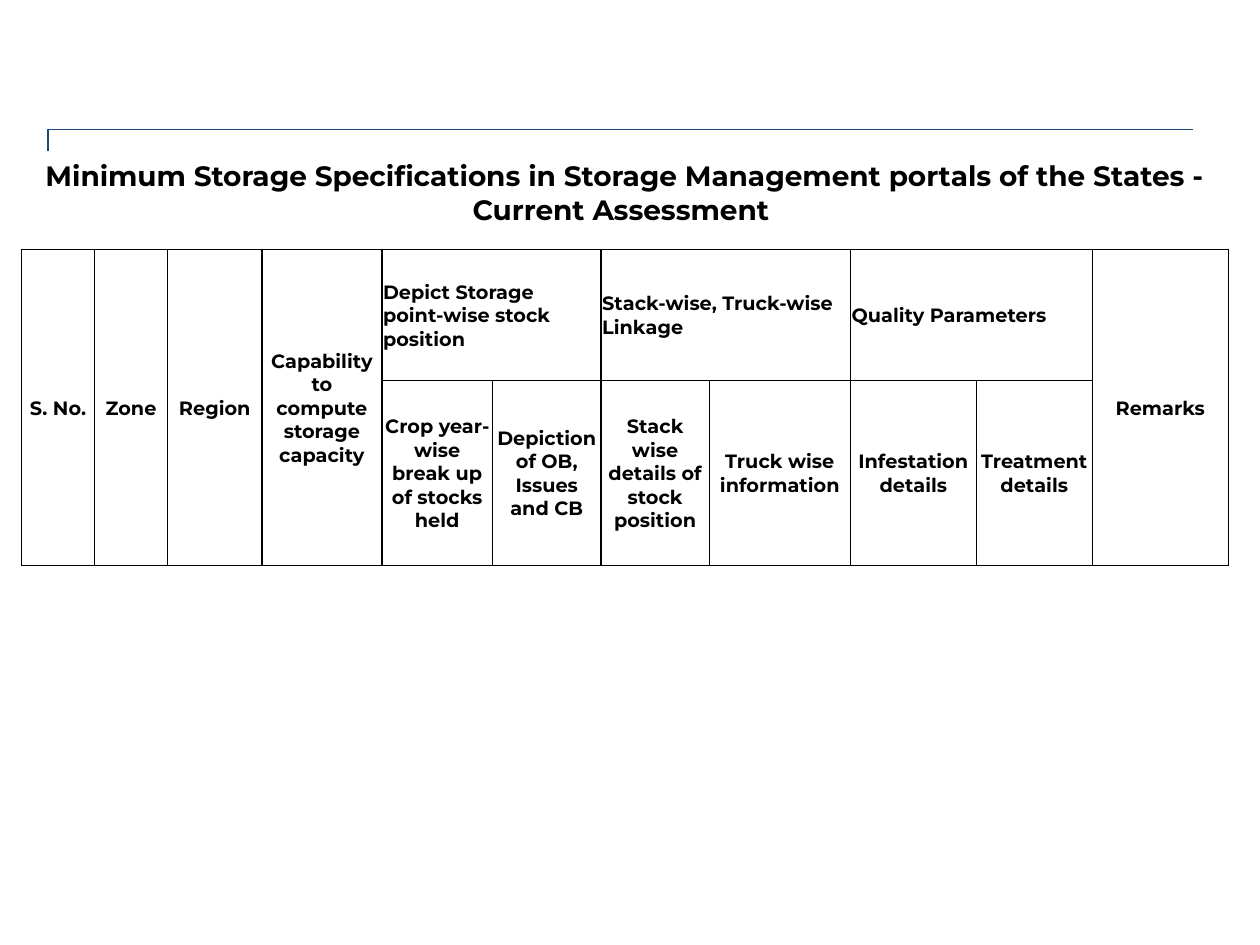
from lxml.etree import SubElement
from pptx import Presentation
from pptx.dml.color import RGBColor
from pptx.enum.shapes import MSO_CONNECTOR as Connector
from pptx.enum.text import MSO_ANCHOR as Anchor, PP_ALIGN as Align
from pptx.oxml import parse_xml
from pptx.oxml.ns import nsdecls, qn
from pptx.util import Pt

COLORS = {"ink": "000000", "rule": "1F497D"}
FONT = "Montserrat"
COLUMN_WIDTHS = [41.76, 41.76, 54, 68.4, 63.36, 61.92, 61.92, 80.64, 72, 66.24, 77.76]
ROW_HEIGHTS = [64.8, 74.88, 105.84]
TITLE = ("Minimum Storage Specifications in Storage Management portals "
         "of the States - Current Assessment ")
SINGLE_HEADINGS = {0: "S. No.", 1: "Zone", 2: "Region",
                   3: "Capability to compute storage capacity", 10: "Remarks"}
GROUPS = [
    ("Depict Storage point-wise stock position",
     ["Crop year-wise break up of stocks held", "Depiction of OB, Issues and CB"]),
    ("Stack-wise, Truck-wise Linkage",
     ["Stack wise details of stock position", "Truck wise information"]),
    ("Quality Parameters", ["Infestation details", "Treatment details"]),
]
FIRST_GROUP_COLUMN = 4


def write_text(cell, text, size=11, align=Align.CENTER):
    cell.vertical_anchor = Anchor.MIDDLE
    cell.margin_left = cell.margin_right = cell.margin_top = Pt(0.72)
    cell.margin_bottom = Pt(0)
    paragraph = cell.text_frame.paragraphs[0]
    paragraph.alignment = align
    run = paragraph.add_run()
    run.text = text
    run.font.name = FONT
    run.font.size = Pt(size)
    run.font.bold = True
    run.font.color.rgb = RGBColor.from_string(COLORS["ink"])


def set_borders(cell, visible_sides):
    properties = cell._tc.get_or_add_tcPr()
    for position, side in enumerate("LRTB"):
        if side in visible_sides:
            paint = f'<a:solidFill><a:srgbClr val="{COLORS["ink"]}"/></a:solidFill>'
        else:
            paint = "<a:noFill/>"
        border = parse_xml(f'<a:ln{side} {nsdecls("a")} w="{Pt(1)}">{paint}</a:ln{side}>')
        properties.insert(position, border)


def add_header_rule(slide):
    """Draw the long line whose left end turns down."""
    rule = slide.shapes.add_connector(
        Connector.ELBOW, Pt(27.36), Pt(86.4), Pt(681.84), Pt(74.16))
    rule.line.color.rgb = RGBColor.from_string(COLORS["rule"])
    rule.line.width = Pt(0.75)
    properties = rule._element.spPr
    SubElement(properties, qn("a:effectLst"))
    adjustments = properties.find(qn("a:prstGeom")).get_or_add_avLst()
    SubElement(adjustments, qn("a:gd"), name="adj1", fmla="val 0")


def add_grid(slide):
    """Add the empty table with its sizes, clear fills and borders."""
    table = slide.shapes.add_table(
        len(ROW_HEIGHTS), len(COLUMN_WIDTHS), Pt(12.24), Pt(77.76),
        Pt(sum(COLUMN_WIDTHS)), Pt(sum(ROW_HEIGHTS))).table
    table.first_row = table.horz_banding = False
    for column, width in zip(table.columns, COLUMN_WIDTHS):
        column.width = Pt(width)
    for index, (row, height) in enumerate(zip(table.rows, ROW_HEIGHTS)):
        row.height = Pt(height)
        for cell in row.cells:
            cell.fill.background()
            set_borders(cell, "LRTB" if index else "B")
    return table


def fill_headings(table):
    title = table.cell(0, 0)
    title.merge(table.cell(0, len(COLUMN_WIDTHS) - 1))
    write_text(title, TITLE, size=16)
    for column, heading in SINGLE_HEADINGS.items():
        table.cell(1, column).merge(table.cell(2, column))
        write_text(table.cell(1, column), heading)
    column = FIRST_GROUP_COLUMN
    for group, details in GROUPS:
        table.cell(1, column).merge(table.cell(1, column + len(details) - 1))
        write_text(table.cell(1, column), group, align=Align.LEFT)
        for detail in details:
            write_text(table.cell(2, column), detail)
            column += 1


def main():
    presentation = Presentation()
    presentation.slide_width, presentation.slide_height = Pt(720), Pt(540)
    slide = presentation.slides.add_slide(presentation.slide_layouts[6])
    add_header_rule(slide)
    fill_headings(add_grid(slide))
    presentation.save("out.pptx")


if __name__ == "__main__":
    main()
